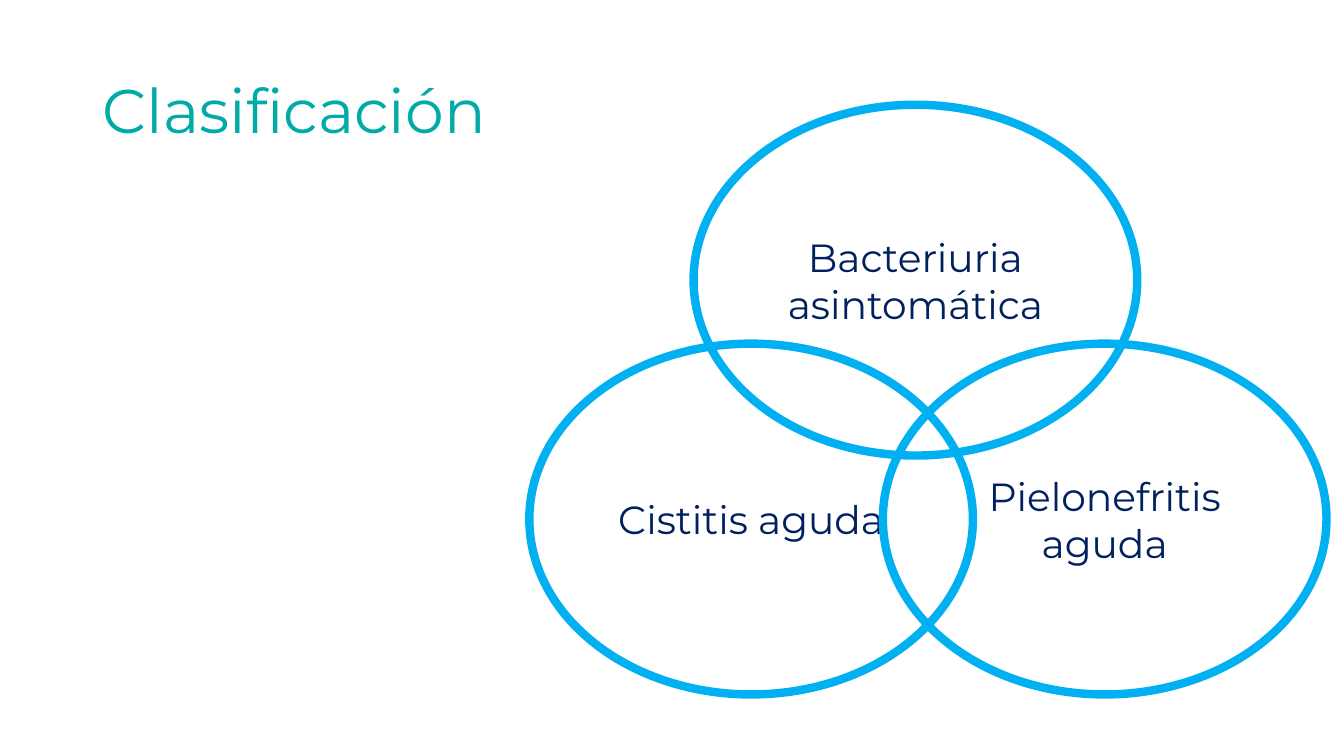
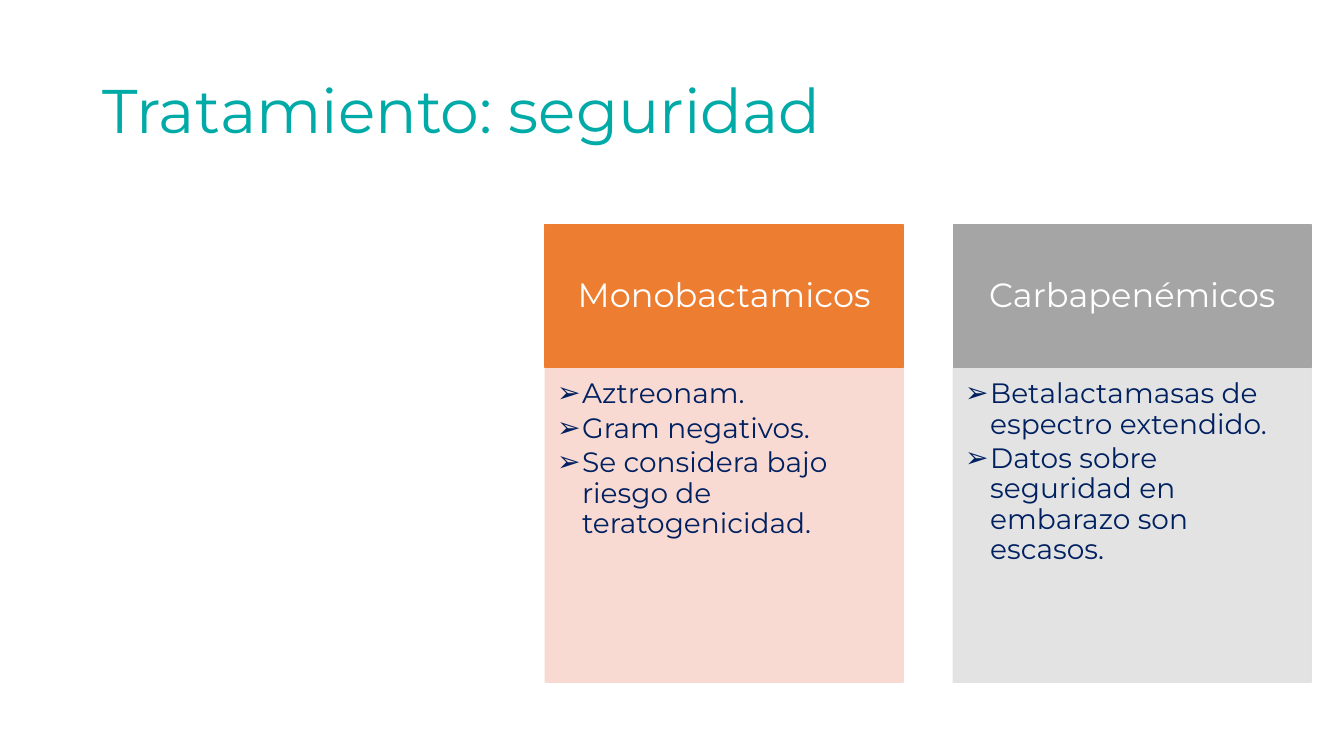
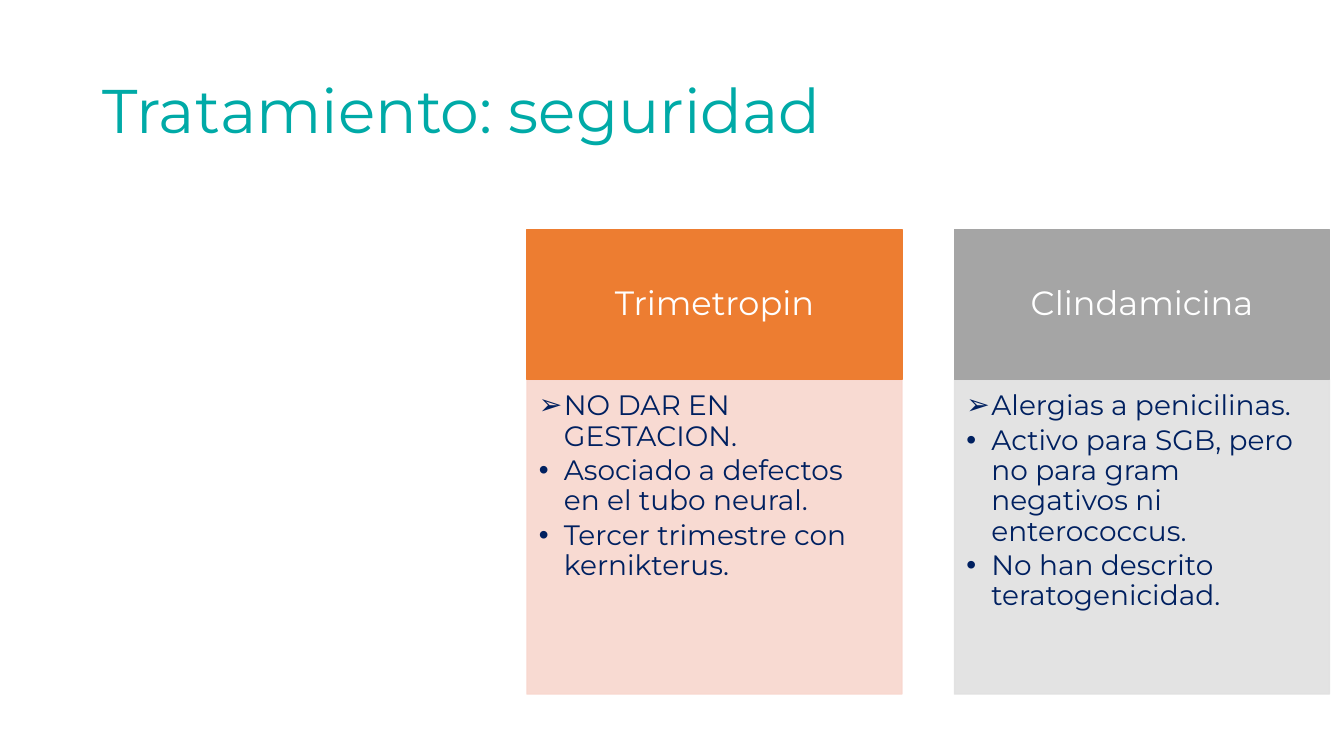
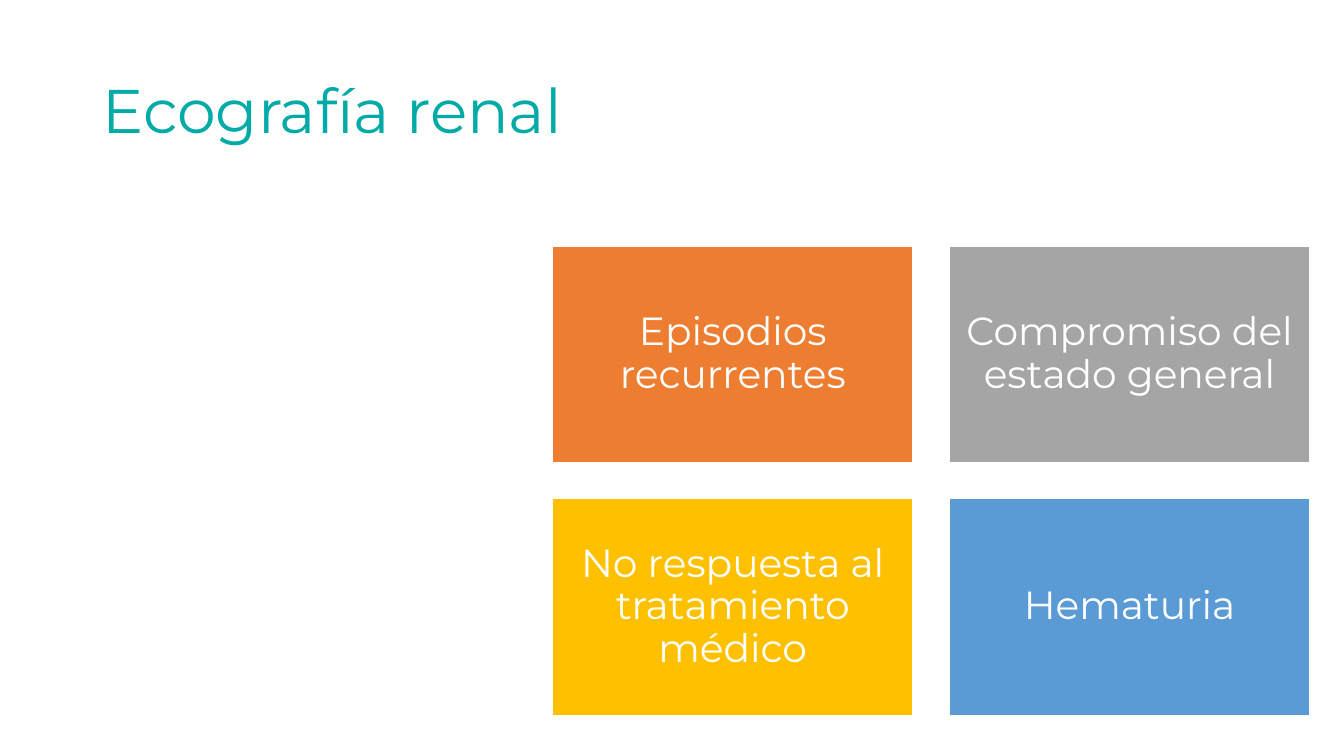
import pptx
import pptx.util
import pptx.dml.color
import pptx.enum.shapes
import pptx.enum.text
import pptx.oxml.ns
from dataclasses import dataclass
from lxml import etree

Cm, Pt = pptx.util.Cm, pptx.util.Pt
Kind = pptx.enum.shapes.MSO_SHAPE
Align = pptx.enum.text.PP_ALIGN
Anchor = pptx.enum.text.MSO_ANCHOR
qn = pptx.oxml.ns.qn


# Colours and type sizes
@dataclass(frozen=True)
class Theme:
    font: str = "Montserrat"
    teal: str = "00AAA7"
    navy: str = "002060"
    sky: str = "00B0F0"
    white: str = "FFFFFF"
    orange: str = "ED7D31"
    gray: str = "A5A5A5"
    gold: str = "FFC000"
    blue: str = "5B9BD5"
    blush: str = "F8D7CE"
    mist: str = "E1E1E1"
    title: int = 44
    large: int = 28
    head: int = 24
    body: int = 20


def rgb(code):
    return pptx.dml.color.RGBColor.from_string(code)


class Deck:
    two_lists, title_only = 3, 5

    def __init__(self):
        self.theme = Theme()
        self.file = pptx.Presentation()
        self.file.slide_width = Cm(33.87)
        self.file.slide_height = Cm(19.05)
        self.slide = None

    # Shared styling
    def label(self, shape, lines, size, color, align=Align.CENTER,
              anchor=Anchor.MIDDLE, inset=(0.25, 0.13, 0.25, 0.13), space=0.9):
        frame = shape.text_frame
        frame.text = "\n".join(lines)
        frame.word_wrap = True
        frame.auto_size = pptx.enum.text.MSO_AUTO_SIZE.NONE
        frame.vertical_anchor = anchor
        (frame.margin_left, frame.margin_top,
         frame.margin_right, frame.margin_bottom) = map(Cm, inset)
        for para in frame.paragraphs:
            para.alignment = align
            para.line_spacing = space
            para.space_before = Pt(0)
            for run in para.runs:
                run.font.name = self.theme.font
                run.font.size = Pt(size)
                run.font.color.rgb = rgb(color)

    def paint(self, shape, fill, line, width=1):
        if fill:
            shape.fill.solid()
            shape.fill.fore_color.rgb = rgb(fill)
        else:
            shape.fill.background()
        shape.line.color.rgb = rgb(line)
        shape.line.width = Pt(width)

    def place(self, shape, left, top, width, height):
        shape.left, shape.top = Cm(left), Cm(top)
        shape.width, shape.height = Cm(width), Cm(height)

    # Slide with its title
    def page(self, title, layout=title_only):
        self.slide = self.file.slides.add_slide(self.file.slide_layouts[layout])
        shape = self.slide.shapes.title
        self.place(shape, 2.33, 1.02, 29.21, 3.68)
        self.label(shape, [title], self.theme.title, self.theme.teal, Align.LEFT)

    # Shapes with text
    def shape(self, kind, box):
        shape = self.slide.shapes.add_shape(kind, *map(Cm, box))
        shape.shadow.inherit = False
        return shape

    def ring(self, lines, box):
        shape = self.shape(Kind.OVAL, box)
        self.paint(shape, None, self.theme.sky, 6)
        self.label(shape, lines, self.theme.large, self.theme.navy, space=1.0)

    def tile(self, text, box, fill, line, size, inset):
        shape = self.shape(Kind.RECTANGLE, box)
        self.paint(shape, fill, line)
        self.label(shape, [text], size, self.theme.white, inset=inset)

    # Bulleted list in a body placeholder
    def items(self, slot, rows, box, fill):
        shape = self.slide.placeholders[slot]
        self.place(shape, *box)
        self.paint(shape, fill, fill)
        for color in shape.element.spPr.iter(qn("a:srgbClr")):
            etree.SubElement(color, qn("a:alpha"), val="90000")
        self.label(shape, [text for _, text in rows], self.theme.body,
                   self.theme.navy, Align.LEFT, Anchor.TOP,
                   (0.3, 0.3, 0.41, 0.43))
        for para, (mark, _) in zip(shape.text_frame.paragraphs, rows):
            para.space_after = Pt(3)
            props = para._p.get_or_add_pPr()
            props.set("marL", str(Cm(0.63)))
            props.set("indent", str(-Cm(0.63)))
            etree.SubElement(props, qn("a:buChar"), char=mark)

    # Two columns, each a heading over a list
    def cards(self, left, top, width, cards):
        high = 0.4 * width
        fills = [(self.theme.orange, self.theme.blush),
                 (self.theme.gray, self.theme.mist)]
        for col, ((head, rows), (dark, pale)) in enumerate(zip(cards, fills)):
            x = left + col * 1.14 * width
            self.tile(head, (x, top, width, high), dark, dark,
                      self.theme.head, (0.48, 0.28, 0.48, 0.28))
            self.items(col + 1, rows, (x, top + high, width, 7.92), pale)

    # Two by two grid of tiles
    def grid(self, left, top, width, height, gap, texts):
        fills = [self.theme.orange, self.theme.gray,
                 self.theme.gold, self.theme.blue]
        for num, (text, fill) in enumerate(zip(texts, fills)):
            row, col = divmod(num, 2)
            box = (left + col * (width + gap), top + row * (height + gap),
                   width, height)
            self.tile(text, box, fill, self.theme.white,
                      self.theme.large, (0.3,) * 4)


def main():
    deck = Deck()

    # Classification
    deck.page("Clasificación")
    for lines, left, top in [
        (["Bacteriuria", "asintomática"], 17.48, 2.64),
        (["Cistitis aguda"], 13.34, 8.66),
        (["Pielonefritis aguda"], 22.25, 8.66),
    ]:
        deck.ring(lines, (left, top, 11.18, 8.84))

    # Treatment safety
    deck.page("Tratamiento: seguridad", Deck.two_lists)
    deck.cards(13.74, 5.66, 9.02, [
        ("Monobactamicos", [
            ("➢", "Aztreonam."),
            ("➢", "Gram negativos."),
            ("➢", "Se considera bajo riesgo de teratogenicidad."),
        ]),
        ("Carbapenémicos", [
            ("➢", "Betalactamasas de espectro extendido."),
            ("➢", "Datos sobre seguridad en embarazo son escasos."),
        ]),
    ])

    # Treatment safety, continued
    deck.page("Tratamiento: seguridad", Deck.two_lists)
    deck.cards(13.28, 5.79, 9.45, [
        ("Trimetropin", [
            ("➢", "NO DAR EN GESTACION."),
            ("•", "Asociado a defectos en el tubo neural."),
            ("•", "Tercer trimestre con kernikterus."),
        ]),
        ("Clindamicina", [
            ("➢", "Alergias a penicilinas."),
            ("•", "Activo para SGB, pero no para gram negativos ni enterococcus."),
            ("•", "No han descrito teratogenicidad."),
        ]),
    ])

    # Renal ultrasound
    deck.page("Ecografía renal")
    deck.grid(13.92, 6.2, 9.09, 5.46, 0.91, [
        "Episodios recurrentes", "Compromiso del estado general",
        "No respuesta al tratamiento médico", "Hematuria",
    ])

    deck.file.save("out.pptx")


if __name__ == "__main__":
    main()
